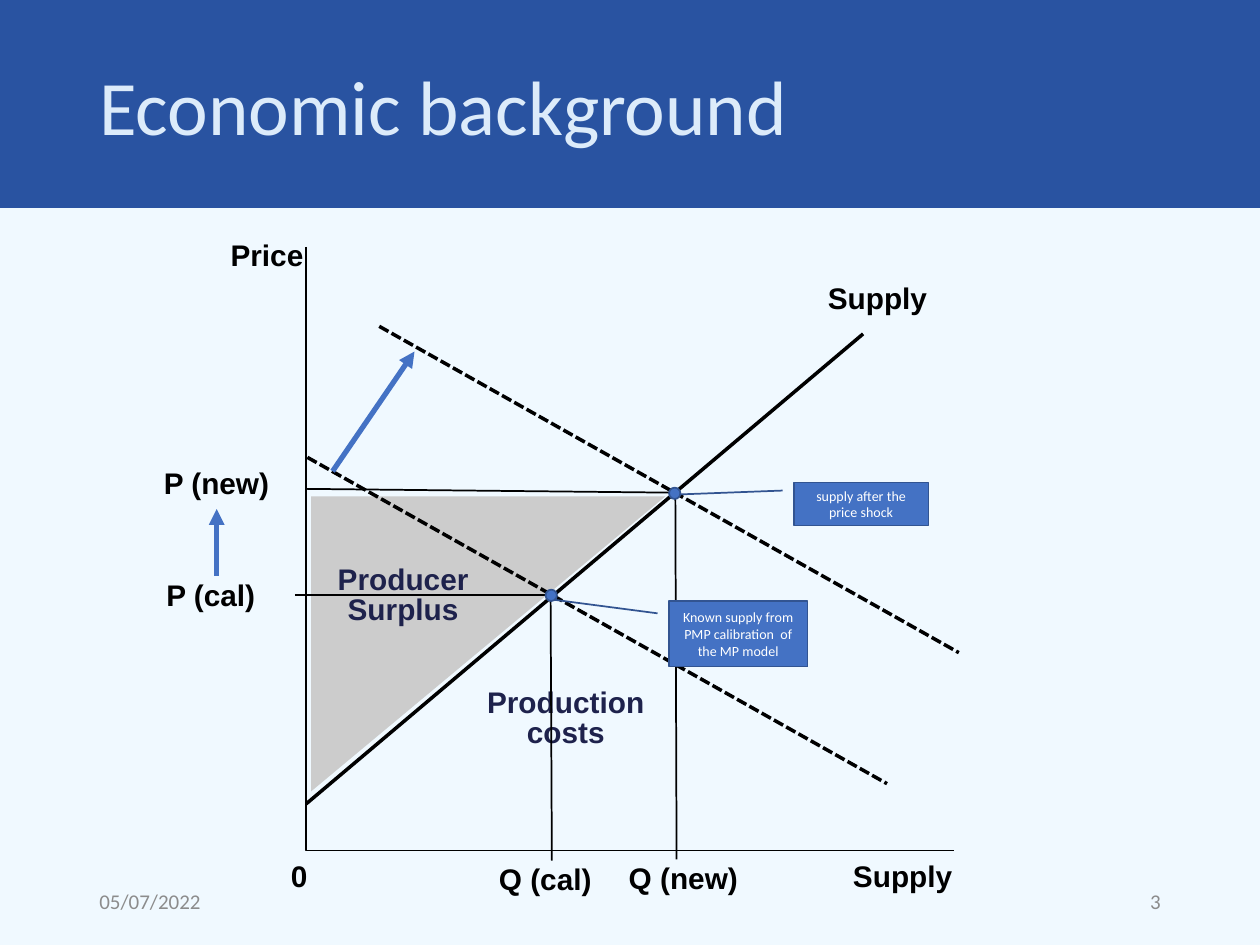
from collections import namedtuple
from dataclasses import dataclass

from lxml import etree
from pptx import Presentation, util as u
from pptx.dml.color import RGBColor
from pptx.enum import dml, shapes, text
from pptx.oxml.ns import qn

COLUMNS, ROWS = 100, 75
SLIDE_WIDTH, SLIDE_HEIGHT = u.Inches(10), u.Inches(7.5)


@dataclass(frozen=True)
class Theme:
    background: str = "F0F9FF"
    banner: str = "2953A1"
    title: str = "DCEBFA"
    footer: str = "8C8C8C"
    ink: str = "000000"
    area: str = "CCCCCC"
    area_label: str = "1E224C"
    accent: str = "4472C4"
    accent_edge: str = "325491"
    white: str = "FFFFFF"
    body_font: str = "Calibri"
    graph_font: str = "Arial"
    title_size: int = 44
    label_size: int = 17
    footer_size: int = 12
    callout_size: int = 8


THEME = Theme()
ALIGN, ANCHOR = text.PP_ALIGN, text.MSO_ANCHOR
GRAPH_LABEL = dict(name=THEME.graph_font, size=THEME.label_size, bold=True)


class Box(namedtuple("Box", "col row cols rows")):
    """A region of the slide, measured in grid columns and rows."""

    def inner(self, col, row, cols, rows):
        return Box(self.col + col, self.row + row, cols, rows)

    def point(self, col, row):
        return (round((self.col + col) * SLIDE_WIDTH / COLUMNS),
                round((self.row + row) * SLIDE_HEIGHT / ROWS))

    def frame(self):
        left, top = self.point(0, 0)
        right, bottom = self.point(self.cols, self.rows)
        return left, top, right - left, bottom - top


def rgb(color):
    return RGBColor.from_string(color)


def write(shape, words, color, size, align=ALIGN.LEFT, spacing=None,
          frame_format=None, **font_format):
    frame = shape.text_frame
    settings = dict(word_wrap=True, vertical_anchor=ANCHOR.MIDDLE)
    for key, value in {**settings, **(frame_format or {})}.items():
        setattr(frame, key, value)
    paragraph = frame.paragraphs[0]
    paragraph.alignment = align
    if spacing:
        paragraph.line_spacing = spacing
    run = paragraph.add_run()
    run.text = words
    for key, value in {**font_format, "size": u.Pt(size)}.items():
        setattr(run.font, key, value)
    run.font.color.rgb = rgb(color)


def paint(shape, fill=None, line=None, width=1):
    shape.shadow.inherit = False
    if fill:
        shape.fill.solid()
        shape.fill.fore_color.rgb = rgb(fill)
    else:
        shape.fill.background()
    if line:
        shape.line.color.rgb = rgb(line)
        shape.line.width = u.Pt(width)
    else:
        shape.line.fill.background()


def add_text(slide, box, *args, **options):
    write(slide.shapes.add_textbox(*box.frame()), *args, **options)


def add_preset(slide, box, preset, fill, line=None):
    shape = slide.shapes.add_shape(preset, *box.frame())
    paint(shape, fill, line)
    return shape


def add_line(slide, box, start, end, color=THEME.ink, width=1,
             dashed=False, arrow=False):
    line = slide.shapes.add_connector(
        shapes.MSO_CONNECTOR.STRAIGHT, *box.point(*start), *box.point(*end))
    line.line.color.rgb = rgb(color)
    line.line.width = u.Pt(width)
    if dashed:
        line.line.dash_style = dml.MSO_LINE.SQUARE_DOT
    if arrow:
        etree.SubElement(line.line._get_or_add_ln(), qn("a:tailEnd"),
                         type="triangle")
    etree.SubElement(line._element.spPr, qn("a:effectLst"))


def add_path(slide, box, points, close=False, **colors):
    start, *rest = [box.point(*point) for point in points]
    builder = slide.shapes.build_freeform(*start)
    builder.add_line_segments(rest, close=close)
    paint(builder.convert_to_shape(), **colors)


def add_banner(slide, box):
    add_preset(slide, box, shapes.MSO_SHAPE.RECTANGLE, THEME.banner)
    add_text(slide, box.inner(6.9, 1.5, 86.2, 14.5), "Economic background",
             THEME.title, THEME.title_size, spacing=0.9, name=THEME.body_font)


def add_footer(slide, box):
    cols = 22.5
    for words, col, align in (("05/07/2022", 0, ALIGN.LEFT),
                              ("3", box.cols - cols, ALIGN.RIGHT)):
        add_text(slide, box.inner(col, 0, cols, box.rows), words, THEME.footer,
                 THEME.footer_size, align, name=THEME.body_font)


def add_labels(slide, box):
    flush = dict.fromkeys(
        ("margin_left", "margin_top", "margin_right", "margin_bottom"), 0)
    flush["vertical_anchor"] = ANCHOR.TOP
    for words, col, row, cols in (
            ("Supply", 43.4, 48.5, 8), ("Price", -6, -0.8, 5.9),
            ("0", -1.2, 48.5, 1.3), ("P (cal)", -11.1, 26.2, 8.1),
            ("P (new)", -11.3, 17.3, 11), ("Supply", 41.4, 2.6, 8),
            ("Q (cal)", 15.3, 48.7, 7.4), ("Q (new)", 25.6, 48.6, 8.7)):
        add_text(slide, box.inner(col, row, cols, 2.9), words, THEME.ink,
                 THEME.label_size, **{k: v for k, v in GRAPH_LABEL.items() if k != "size"},
                 frame_format={**flush, "word_wrap": False})
    for words, *place in (("Producer Surplus", 1.5, 25.3, 12.4, 4.5),
                          ("Production costs", 13.2, 35.1, 14.8, 4.9)):
        add_text(slide, box.inner(*place), words, THEME.area_label,
                 THEME.label_size, ALIGN.CENTER, spacing=0.85,
                 name=THEME.graph_font, bold=True, frame_format=flush)


def add_curves(slide, box):
    add_line(slide, box, (0, 44.2), (44.2, 6.9), width=2)
    for start, end in (((0, 19.2), (29, 19.5)), ((-0.9, 27.6), (19.1, 27.6)),
                       ((29.4, 48.6), (29.3, 19.5)),
                       ((19.5, 48.7), (19.4, 27.6))):
        add_line(slide, box, start, end)
    for col, row in ((0.1, 16.7), (5.8, 6.3)):
        add_line(slide, box, (col, row), (col + 46, row + 25.9),
                 width=2, dashed=True)
    for start, end in (((-7.1, 26.1), (-7.1, 20.8)), ((2.1, 17.8), (8.6, 8.3))):
        add_line(slide, box, start, end, THEME.accent, 3, arrow=True)


def add_equilibria(slide, box):
    """Marks each crossing of supply and demand and explains it."""
    dot = 0.9
    for center, place, pointer, words in (
            ((19.45, 27.65), (28.8, 28.1, 11, 5.2), (-0.018, -0.822),
             "Known supply from PMP calibration  of the MP model"),
            ((29.25, 19.55), (38.7, 18.7, 10.7, 3.4), (0.278, -0.848),
             "supply after the price shock")):
        col, row = (value - dot / 2 for value in center)
        add_preset(slide, box.inner(col, row, dot, dot),
                   shapes.MSO_SHAPE.OVAL, THEME.accent, THEME.accent_edge)
        callout = add_preset(slide, box.inner(*place),
                             shapes.MSO_SHAPE.LINE_CALLOUT_1,
                             THEME.accent, THEME.accent_edge)
        for index, value in enumerate((0.188, -0.083, *pointer)):
            callout.adjustments[index] = value
        write(callout, words, THEME.white, THEME.callout_size, ALIGN.CENTER,
              name=THEME.body_font)


def add_supply_graph(slide, box):
    add_path(slide, box, [(28.5, 19.8), (0.4, 19.8), (0.4, 43.2)],
             close=True, fill=THEME.area)
    add_labels(slide, box)
    add_path(slide, box, [(0, 0), (0, box.rows), (box.cols, box.rows)],
             line=THEME.ink)
    add_curves(slide, box)
    add_equilibria(slide, box)


def main():
    deck = Presentation()
    deck.slide_width, deck.slide_height = SLIDE_WIDTH, SLIDE_HEIGHT
    slide = deck.slides.add_slide(deck.slide_layouts[6])
    slide.background.fill.solid()
    slide.background.fill.fore_color.rgb = rgb(THEME.background)
    add_banner(slide, Box(0, 0, COLUMNS, 16.5))
    add_footer(slide, Box(6.9, 69.5, 86.2, 4))
    add_supply_graph(slide, Box(24.3, 19.6, 51.4, 47.9))
    deck.save("out.pptx")


if __name__ == "__main__":
    main()
